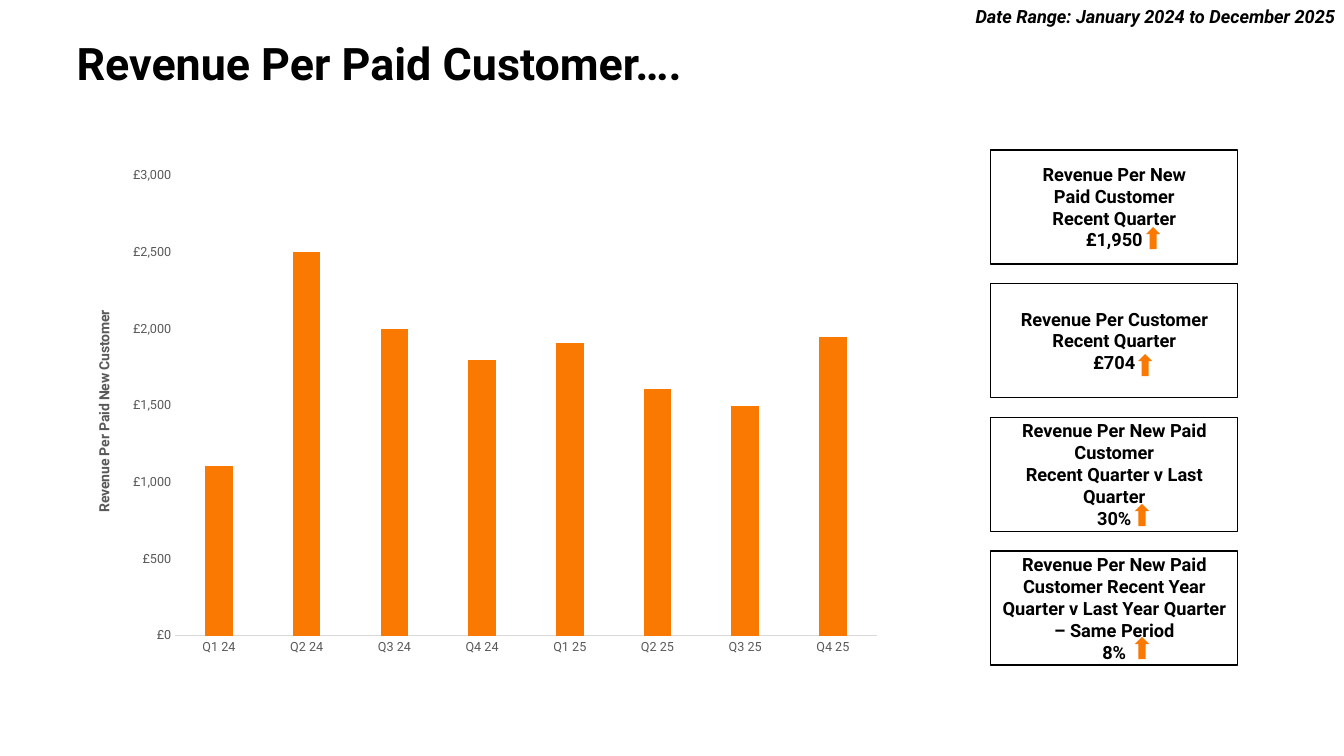
import pptx
import pptx.chart.data
import pptx.dml.color
import pptx.enum.chart
import pptx.enum.shapes
import pptx.enum.text
import pptx.oxml
import pptx.util
from pptx.util import Cm

BLACK = pptx.dml.color.RGBColor(0x00, 0x00, 0x00)
ORANGE = pptx.dml.color.RGBColor(0xFA, 0x79, 0x03)
GREY = pptx.dml.color.RGBColor(0x59, 0x59, 0x59)
PALE_GREY = pptx.dml.color.RGBColor(0xD9, 0xD9, 0xD9)

ALIGN = pptx.enum.text.PP_ALIGN
ANCHOR = pptx.enum.text.MSO_ANCHOR
SHAPE = pptx.enum.shapes.MSO_SHAPE
TICK = pptx.enum.chart.XL_TICK_MARK

QUARTERLY_REVENUE = {
    "Q1 24": 1110, "Q2 24": 2500, "Q3 24": 2000, "Q4 24": 1800,
    "Q1 25": 1910, "Q2 25": 1610, "Q3 25": 1500, "Q4 25": 1950,
}

# Lines of each card, then left and top of its arrow in cm
CARDS = [
    (["Revenue Per New", "Paid Customer", "Recent Quarter", "£1,950"], 28.88, 5.72),
    (["Revenue Per Customer Recent Quarter", "£704"], 28.68, 8.92),
    (["Revenue Per New Paid Customer", "Recent Quarter v Last Quarter", "30%"], 28.6, 12.7),
    (["Revenue Per New Paid Customer Recent Year Quarter v Last Year Quarter"
      " – Same Period", "8%"], 28.6, 16.05),
]
CARD_TOP, CARD_PITCH = 3.78, 3.37


def set_font(font, size, color=BLACK, bold=False, italic=False):
    font.name = "Roboto"
    font.size = pptx.util.Pt(size)
    font.bold = bold
    font.italic = italic
    font.color.rgb = color


def write(frame, lines, align=ALIGN.LEFT, anchor=ANCHOR.TOP, spacing=None, **style):
    """Fill a text frame with one paragraph per line."""
    frame.word_wrap = True
    frame.vertical_anchor = anchor
    for index, line in enumerate(lines):
        paragraph = frame.add_paragraph() if index else frame.paragraphs[0]
        paragraph.alignment = align
        if spacing:
            paragraph.line_spacing = spacing
        run = paragraph.add_run()
        run.text = line
        set_font(run.font, **style)


class RevenueSlide:
    def __init__(self, presentation):
        self.slide = presentation.slides.add_slide(presentation.slide_layouts[5])
        self.shapes = self.slide.shapes

    def title(self, text):
        heading = self.shapes.title
        heading.left, heading.top = Cm(1.93), Cm(1.04)
        heading.width, heading.height = Cm(30), Cm(1.7)
        frame = heading.text_frame
        frame.margin_left = frame.margin_right = 0
        frame.margin_top = frame.margin_bottom = 0
        frame.auto_size = pptx.enum.text.MSO_AUTO_SIZE.NONE
        write(frame, [text], spacing=0.9, size=32, bold=True)

    def date_range(self, text):
        label = self.shapes.add_textbox(Cm(23.88), Cm(0), Cm(10.01), Cm(0.81))
        write(label.text_frame, [text], align=ALIGN.RIGHT, size=13, bold=True, italic=True)

    def card(self, lines, top):
        card = self.shapes.add_shape(SHAPE.RECTANGLE, Cm(24.97), Cm(top), Cm(6.22), Cm(2.87))
        card.shadow.inherit = False
        card.fill.background()
        card.line.color.rgb = BLACK
        card.line.width = pptx.util.Pt(1)
        write(card.text_frame, lines, align=ALIGN.CENTER, anchor=ANCHOR.MIDDLE,
              size=13, bold=True)

    def rise_arrow(self, left, top):
        arrow = self.shapes.add_shape(SHAPE.UP_ARROW, Cm(left), Cm(top), Cm(0.36), Cm(0.56))
        arrow.shadow.inherit = False
        arrow.fill.solid()
        arrow.fill.fore_color.rgb = ORANGE
        arrow.line.fill.background()

    def revenue_chart(self, revenue):
        data = pptx.chart.data.CategoryChartData()
        data.categories = list(revenue)
        data.add_series("Series 1", list(revenue.values()))
        chart = self.shapes.add_chart(
            pptx.enum.chart.XL_CHART_TYPE.COLUMN_CLUSTERED,
            Cm(1.83), Cm(4.01), Cm(20.68), Cm(12.75), data).chart
        set_font(chart.font, 10)
        chart.has_legend = False
        chart.has_title = False

        plot = chart.plots[0]
        plot.gap_width, plot.overlap = 219, -27
        plot.vary_by_categories = False
        columns = plot.series[0].format.fill
        columns.solid()
        columns.fore_color.rgb = ORANGE

        for axis in (chart.category_axis, chart.value_axis):
            axis.major_tick_mark = axis.minor_tick_mark = TICK.NONE
            axis.has_major_gridlines = False
            set_font(axis.tick_labels.font, 9, GREY)
        chart.category_axis.format.line.color.rgb = PALE_GREY
        chart.category_axis.format.line.width = pptx.util.Pt(0.75)

        values = chart.value_axis
        values.format.line.fill.background()
        values.minimum_scale, values.maximum_scale, values.major_unit = 0, 3000, 500
        values.tick_labels.number_format = '"£"#,##0'
        values.tick_labels.number_format_is_linked = False
        write(values.axis_title.text_frame, ["Revenue Per Paid New Customer"],
              align=ALIGN.CENTER, size=10, color=GREY, bold=True)
        body = values.axis_title.text_frame._txBody.bodyPr
        body.set("rot", "-5400000")
        body.set("vert", "horz")
        self.place_plot(chart, x=0.125, y=0.033, w=0.855, h=0.909)

    def place_plot(self, chart, **fractions):
        """Fix the inner plot area as fractions of the chart."""
        area = chart._chartSpace.chart.plotArea
        for old in area.findall(pptx.oxml.ns.qn("c:layout")):
            area.remove(old)
        places = "".join(f'<c:{key} val="{value}"/>' for key, value in fractions.items())
        area.insert(0, pptx.oxml.parse_xml(
            f'<c:layout {pptx.oxml.ns.nsdecls("c")}><c:manualLayout>'
            '<c:layoutTarget val="inner"/><c:xMode val="edge"/><c:yMode val="edge"/>'
            f'{places}</c:manualLayout></c:layout>'))


def main():
    presentation = pptx.Presentation()
    presentation.slide_width, presentation.slide_height = Cm(33.87), Cm(19.05)
    page = RevenueSlide(presentation)
    page.title("Revenue Per Paid Customer….")
    for index, (lines, arrow_left, arrow_top) in enumerate(CARDS):
        page.card(lines, CARD_TOP + index * CARD_PITCH)
        page.rise_arrow(arrow_left, arrow_top)
    page.date_range("Date Range: January 2024 to December 2025")
    page.revenue_chart(QUARTERLY_REVENUE)
    presentation.save("out.pptx")


if __name__ == "__main__":
    main()
